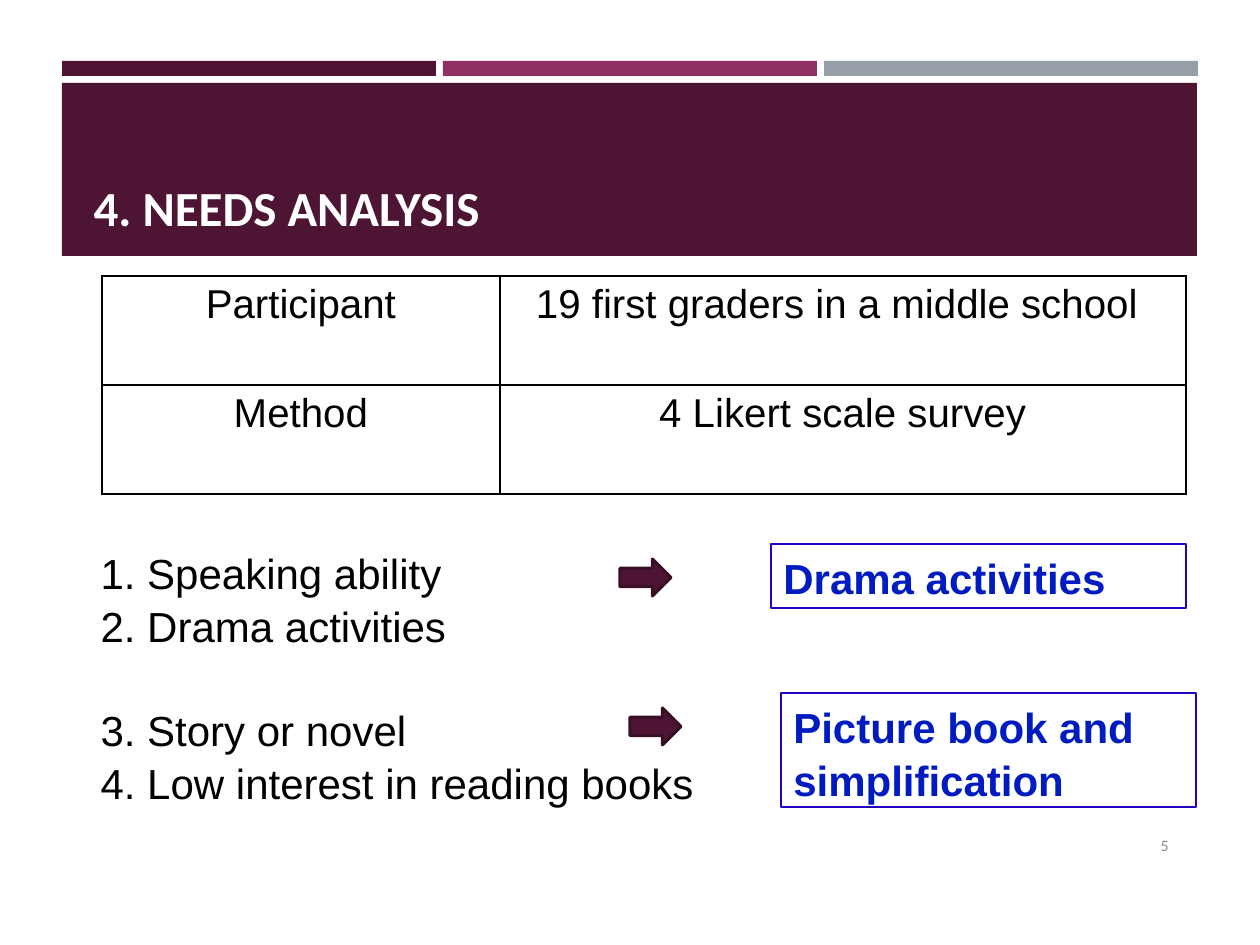
from lxml import etree
from pptx import Presentation
from pptx import util as u
from pptx.dml.color import RGBColor
from pptx.enum import shapes, text
from pptx.oxml import ns

SCALE = u.Inches(1) / 126
PLUM, BLUE, BLACK = "4D1434", "001BC0", "000000"


def px(*lengths):
    """Turn whole pixels into EMU."""
    return [u.Emu(round(length * SCALE)) for length in lengths]


def colour(value):
    """Return the colour for a hex string."""
    return RGBColor.from_string(value)


def write(frame, lines, size=24, font="Arial", ink=BLACK, bold=False,
          align=text.PP_ALIGN.LEFT, anchor=text.MSO_ANCHOR.TOP, spacing=1.0):
    """Fill a text frame with one formatted paragraph per line."""
    frame.word_wrap = True
    frame.auto_size = text.MSO_AUTO_SIZE.NONE
    frame.vertical_anchor = anchor
    for index, line in enumerate(lines):
        paragraph = frame.paragraphs[0] if index == 0 else frame.add_paragraph()
        paragraph.alignment = align
        paragraph.line_spacing = spacing
        paragraph.space_before = u.Pt(0)
        run = paragraph.add_run()
        run.text = line
        run.font.size = u.Pt(size)
        run.font.name = font
        run.font.bold = bold
        run.font.color.rgb = colour(ink)


def place(shape, box):
    """Move and size a shape by its pixel box."""
    shape.left, shape.top, shape.width, shape.height = px(*box)


def add_shape(slide, kind, box, fill=None, line=None, weight=0.75):
    """Add a flat preset shape."""
    shape = slide.shapes.add_shape(kind, *px(*box))
    shape.shadow.inherit = False
    if fill:
        shape.fill.solid()
        shape.fill.fore_color.rgb = colour(fill)
    else:
        shape.fill.background()
    if line:
        shape.line.color.rgb = colour(line)
        shape.line.width = u.Pt(weight)
    else:
        shape.line.fill.background()
    return shape


def add_header(slide, heading):
    """Draw the bands and set the title on top of them."""
    for index, fill in enumerate((PLUM, "903163", "969FA7")):
        add_shape(slide, shapes.MSO_SHAPE.RECTANGLE, (62 + 381 * index, 61, 374, 15), fill)
    add_shape(slide, shapes.MSO_SHAPE.RECTANGLE, (62, 83, 1135, 173), PLUM)
    title = slide.shapes.title
    place(title, (81, 94, 1101, 149))
    write(title.text_frame, [heading], size=28, font="Calibri", ink="FFFFFF",
          bold=True, anchor=text.MSO_ANCHOR.BOTTOM)
    title.element.getparent().append(title.element)


def add_findings(slide, lines, gap_before):
    """Put the numbered findings in the body placeholder, in two groups."""
    body = slide.placeholders[1]
    place(body, (88, 539, 1040, 386))
    write(body.text_frame, lines, spacing=1.05)
    for paragraph in body.text_frame.paragraphs:
        properties = paragraph._p.get_or_add_pPr()
        properties.set("marL", "0")
        properties.set("indent", "0")
        etree.SubElement(properties, ns.qn("a:buNone"))
    body.text_frame.paragraphs[gap_before].space_before = u.Pt(29)


def add_border(cell):
    """Draw a thin black line on each side of a cell."""
    properties = cell._tc.get_or_add_tcPr()
    for index, side in enumerate(("lnL", "lnR", "lnT", "lnB")):
        line = etree.Element(ns.qn("a:" + side), w=str(u.Pt(1)))
        fill = etree.SubElement(line, ns.qn("a:solidFill"))
        etree.SubElement(fill, ns.qn("a:srgbClr"), val=BLACK)
        properties.insert(index, line)


def add_grid(slide, rows):
    """Add the table of participants and method."""
    table = slide.shapes.add_table(len(rows), 2, *px(102, 276, 1084, 218)).table
    table.first_row = table.horz_banding = False
    for column, width in zip(table.columns, px(398, 686)):
        column.width = width
    for row, values in zip(table.rows, rows):
        row.height = px(109)[0]
        for cell, value in zip(row.cells, values):
            cell.fill.background()
            add_border(cell)
            write(cell.text_frame, [value], size=23, align=text.PP_ALIGN.CENTER)


def add_outcome(slide, left, top, height, label):
    """Add an arrow and the framed outcome to its right."""
    add_shape(slide, shapes.MSO_SHAPE.RIGHT_ARROW, (left, top + 15, 51, 37),
              PLUM, "390F26", 1.75)
    frame = add_shape(slide, shapes.MSO_SHAPE.RECTANGLE,
                      (left + 151, top, 415, height), line="2102BE")
    write(frame.text_frame, [label], ink=BLUE, bold=True, spacing=1.05)


def add_number(slide, number):
    """Add the page number."""
    box = slide.shapes.add_textbox(*px(1075, 820, 106, 51))
    write(box.text_frame, [number], size=9, font="Calibri", ink="8C8C8C",
          align=text.PP_ALIGN.RIGHT, anchor=text.MSO_ANCHOR.MIDDLE)


def main():
    """Build and save the slide."""
    presentation = Presentation()
    presentation.slide_width, presentation.slide_height = px(1260, 945)
    slide = presentation.slides.add_slide(presentation.slide_layouts[1])
    add_header(slide, "4. NEEDS ANALYSIS")
    add_findings(slide, ["1. Speaking ability", "2. Drama activities",
                         "3. Story or novel", "4. Low interest in reading books"],
                 gap_before=2)
    add_grid(slide, [("Participant", "19 first graders in a middle school "),
                     ("Method", "4 Likert scale survey")])
    add_outcome(slide, 620, 544, 64, "Drama activities")
    add_outcome(slide, 630, 693, 114, "Picture book and simplification")
    add_number(slide, "5")
    presentation.save("out.pptx")


if __name__ == "__main__":
    main()
